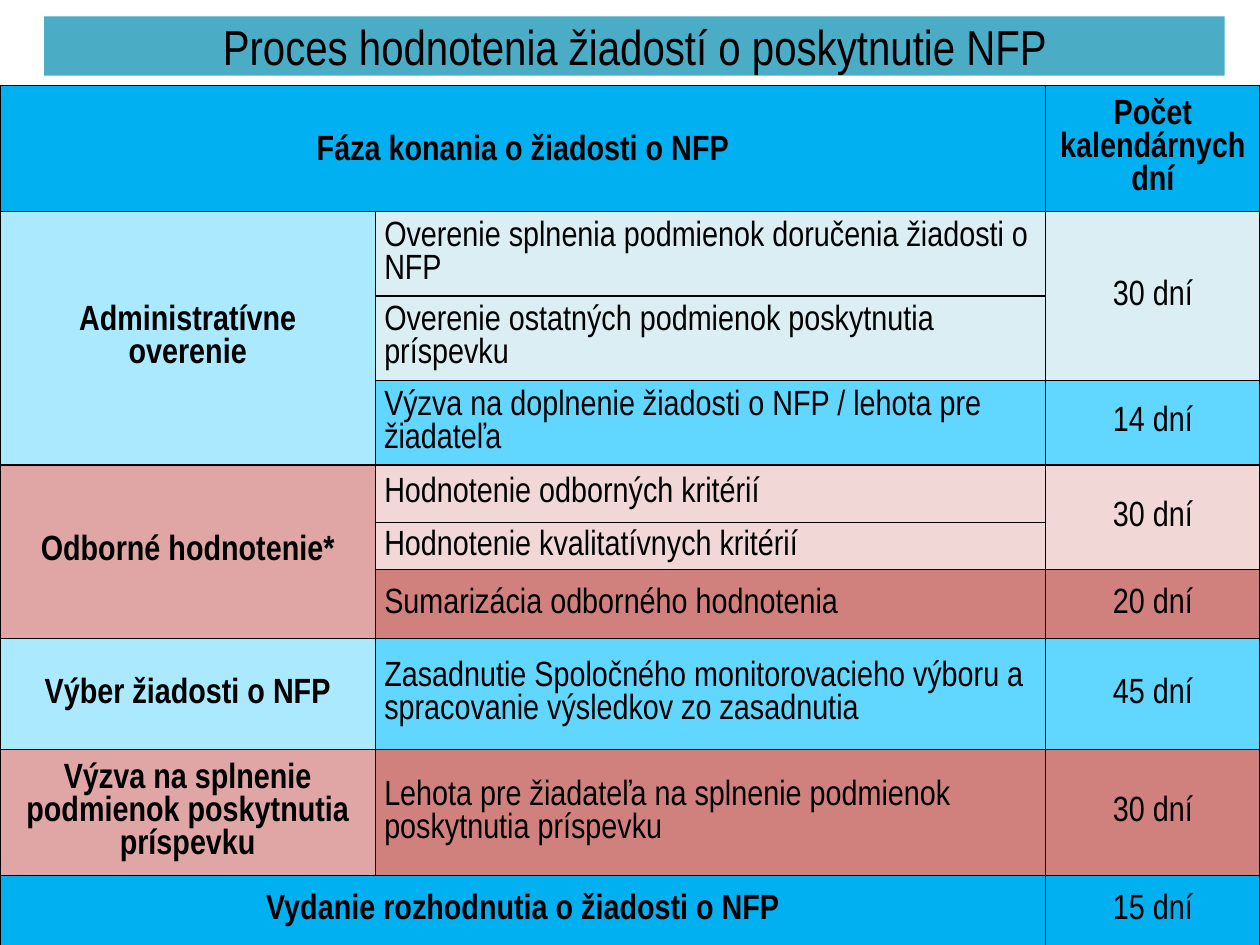
from lxml.etree import SubElement
from pptx import Presentation
from pptx.dml.color import RGBColor
from pptx.enum.text import MSO_ANCHOR as Anchor, PP_ALIGN as Align
from pptx.oxml.ns import qn
from pptx.util import Inches, Pt

FONT = "Arial Narrow"
BLACK = "000000"
HEADER = "00B0F0"
BLUE_PALE, BLUE_LIGHT, BLUE = "DBEEF4", "ABE9FF", "61D6FF"
RED_PALE, RED_LIGHT, RED = "F1D8D7", "DFA6A5", "D1817D"

COLUMNS = [2.98, 5.32, 1.7]
ROWS = [1, 0.67, 0.67, 0.67, 0.46, 0.37, 0.55, 0.88, 1, 0.56]

# row, column, rows spanned, columns spanned, fill, bold, space after, paragraphs
CELLS = [
    (0, 0, 1, 2, HEADER, True, 0, ["Fáza konania o žiadosti o NFP"]),
    (0, 2, 1, 1, HEADER, True, 6, ["Počet kalendárnych dní"]),
    (1, 0, 3, 1, BLUE_LIGHT, True, 0, ["Administratívne", "overenie"]),
    (1, 1, 1, 1, BLUE_PALE, False, 3, ["Overenie splnenia podmienok doručenia žiadosti o NFP"]),
    (1, 2, 2, 1, BLUE_PALE, False, 6, ["30 dní"]),
    (2, 1, 1, 1, BLUE_PALE, False, 3, ["Overenie ostatných podmienok poskytnutia príspevku"]),
    (3, 1, 1, 1, BLUE, False, 3, ["Výzva na doplnenie žiadosti o NFP / lehota pre žiadateľa"]),
    (3, 2, 1, 1, BLUE, False, 6, ["14 dní"]),
    (4, 0, 3, 1, RED_LIGHT, True, 6, ["Odborné hodnotenie*"]),
    (4, 1, 1, 1, RED_PALE, False, 3, ["Hodnotenie odborných kritérií"]),
    (4, 2, 2, 1, RED_PALE, False, 6, ["30 dní"]),
    (5, 1, 1, 1, RED_PALE, False, 3, ["Hodnotenie kvalitatívnych kritérií"]),
    (6, 1, 1, 1, RED, False, 3, ["Sumarizácia odborného hodnotenia"]),
    (6, 2, 1, 1, RED, False, 0, ["20 dní"]),
    (7, 0, 1, 1, BLUE_LIGHT, True, 6, ["Výber žiadosti o NFP"]),
    (7, 1, 1, 1, BLUE, False, 3,
     ["Zasadnutie Spoločného monitorovacieho výboru a spracovanie výsledkov zo zasadnutia"]),
    (7, 2, 1, 1, BLUE, False, 6, ["45 dní"]),
    (8, 0, 1, 1, RED_LIGHT, True, 0, ["Výzva na splnenie podmienok poskytnutia príspevku"]),
    (8, 1, 1, 1, RED, False, 3,
     ["Lehota pre žiadateľa na splnenie podmienok poskytnutia príspevku"]),
    (8, 2, 1, 1, RED, False, 0, ["30 dní"]),
    (9, 0, 1, 2, HEADER, True, 3, ["Vydanie rozhodnutia o žiadosti o NFP"]),
    (9, 2, 1, 1, HEADER, False, 3, ["15 dní"]),
]


def paint(fill, colour):
    fill.solid()
    fill.fore_color.rgb = RGBColor.from_string(colour)


def add_run(paragraph, text, size, bold=False):
    run = paragraph.add_run()
    run.text = text
    run.font.name = FONT
    run.font.size = Pt(size)
    run.font.bold = bold
    paint(run.font.fill, BLACK)


presentation = Presentation()
presentation.slide_width = Inches(10)
presentation.slide_height = Inches(7.5)
slide = presentation.slides.add_slide(presentation.slide_layouts[5])

title = slide.shapes.title
title.left, title.top = Inches(0.35), Inches(0.13)
title.width, title.height = Inches(9.37), Inches(0.47)
paint(title.fill, "4BACC6")
title.text_frame.vertical_anchor = Anchor.MIDDLE
title.text_frame.margin_top = title.text_frame.margin_bottom = 0
title_paragraph = title.text_frame.paragraphs[0]
title_paragraph.alignment = Align.CENTER
add_run(title_paragraph, "Proces hodnotenia žiadostí o poskytnutie NFP", 28)

table = slide.shapes.add_table(
    len(ROWS), len(COLUMNS), 0, Inches(0.68),
    presentation.slide_width, Inches(sum(ROWS))).table
table.first_row = table.horz_banding = False
for column, width in zip(table.columns, COLUMNS):
    column.width = Inches(width)
for row, height in zip(table.rows, ROWS):
    row.height = Inches(height)

for cell in table.iter_cells():
    cell.margin_left = cell.margin_right = Inches(0.07)
    cell.margin_top = cell.margin_bottom = 0
    cell.vertical_anchor = Anchor.MIDDLE
    properties = cell._tc.get_or_add_tcPr()
    for side in ("lnL", "lnR", "lnT", "lnB"):
        border = SubElement(properties, qn(f"a:{side}"), w=str(Pt(1)))
        border_fill = SubElement(border, qn("a:solidFill"))
        SubElement(border_fill, qn("a:srgbClr"), val=BLACK)

for row, column, row_span, column_span, colour, bold, space_after, texts in CELLS:
    cell = table.cell(row, column)
    if row_span * column_span > 1:
        cell.merge(table.cell(row + row_span - 1, column + column_span - 1))
    paint(cell.fill, colour)
    for index, text in enumerate(texts):
        frame = cell.text_frame
        paragraph = frame.add_paragraph() if index else frame.paragraphs[0]
        paragraph.alignment = Align.LEFT if column == 1 else Align.CENTER
        paragraph.space_after = Pt(space_after)
        add_run(paragraph, text, 20, bold)
table.cell(0, 0).text_frame.paragraphs[0].line_spacing = 1.15

presentation.save("out.pptx")
